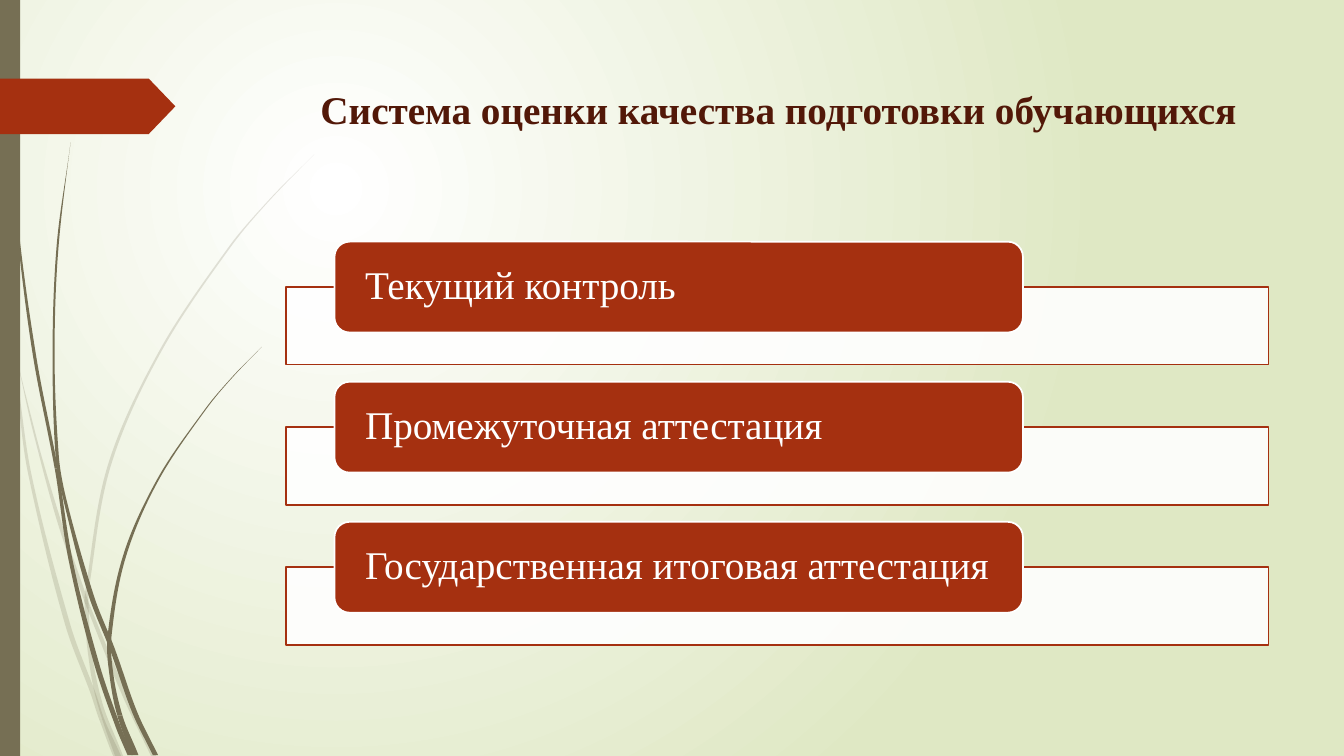
from lxml import etree
from pptx import Presentation, util as u
from pptx.dml.color import RGBColor
from pptx.enum import shapes, text
from pptx.oxml import ns

WHITE = RGBColor(0xFF, 0xFF, 0xFF)
PALE_GREEN = RGBColor(0xDF, 0xE8, 0xC4)
OLIVE = RGBColor(0x76, 0x6F, 0x54)
RUST = RGBColor(0xA5, 0x30, 0x10)
MAROON = RGBColor(0x52, 0x18, 0x08)
FONT = "Times New Roman"

TITLE = "Система оценки качества подготовки обучающихся"
STAGES = ["Текущий контроль", "Промежуточная аттестация",
          "Государственная итоговая аттестация"]
STAGE_PITCH = 3.53

PALE_STEMS = [
    ((1, 6), [(0, 7.37, 0.02), (0.25, 8.79, 0.05), (0.41, 9.55, 0.05), (0.75, 11.94, 0.08),
              (1.71, 15.75, 0.13), (2.35, 17.48, 0.13), (2.57, 18.14, 0.13),
              (2.95, 19.05, 0.2)]),
    ((3, 4), [(0.36, 8.76, 0), (0.89, 11, 0.05), (1.52, 13.23, 0.1), (2.14, 15.05, 0.1),
              (2.24, 15.32, 0.1), (3.18, 17.6, 0.13), (3.87, 19.05, 0.13)]),
    ((6, 8), [(7.92, 3.89, 0), (6.81, 5.02, 0.03), (5.8, 6.21, 0.05), (4.04, 8.85, 0.06),
              (2.76, 11.72, 0.08), (2.2, 14.83, 0.08), (2.18, 15.2, 0.1),
              (2.26, 16.41, 0.1), (2.51, 17.7, 0.13), (3, 19.05, 0.2)]),
]
DARK_STEMS = [
    ((4, 7), [(0.09, 0, 0.02), (0.19, 2.79, 0.03), (0.46, 5.91, 0.05), (0.88, 9.02, 0.08),
              (1.42, 11.81, 0.08), (1.78, 14.12, 0.1), (2.43, 16.71, 0.13),
              (2.97, 18.29, 0.13), (3.28, 19.03, 0.13)]),
    ((3, 4, 6), [(1.78, 3.58, 0), (1.45, 6.22, 0.05), (1.35, 8.86, 0.05),
                 (1.44, 11.46, 0.08), (1.63, 12.57, 0.08), (2.3, 15.01, 0.13),
                 (2.84, 16.38, 0.13), (3.4, 17.96, 0.13), (3.92, 19.03, 0.13)]),
    ((5, 7), [(6.6, 8.74, 0), (5.87, 9.49, 0.02), (5.19, 10.3, 0.03), (3.99, 12.07, 0.05),
              (3.14, 14.01, 0.08), (2.76, 16.05, 0.1), (2.81, 17.02, 0.1),
              (3.02, 18.03, 0.13), (3.4, 19.03, 0.18)]),
]


def paint(shape, color, opacity=100, line=None):
    shape.shadow.inherit = False
    shape.fill.solid()
    shape.fill.fore_color.rgb = color
    if opacity < 100:
        tint = shape.element.spPr.find(ns.qn("a:solidFill"))[0]
        etree.SubElement(tint, ns.qn("a:alpha"), val=str(opacity * 1000))
    if line is None:
        shape.line.fill.background()
    else:
        shape.line.color.rgb = line
        shape.line.width = u.Pt(1.25)


def add_block(page, kind, left, top, width, height):
    return page.shapes.add_shape(kind, u.Cm(left), u.Cm(top), u.Cm(width), u.Cm(height))


def with_slopes(points):
    before = [points[0], *points[:-1]]
    after = [*points[1:], points[-1]]
    return [(x, y, width, (end[0] - start[0]) / (end[1] - start[1]))
            for start, (x, y, width), end in zip(before, points, after)]


def bend_sides(shape, outline):
    lines = list(shape.element.iter(ns.qn("a:lnTo")))
    for line, (x1, y1, slope1), (x2, y2, slope2) in zip(lines, outline, outline[1:]):
        third = (y2 - y1) / 3
        if third:
            line.tag = ns.qn("a:cubicBezTo")
            controls = [(x1 + slope1 * third, y1 + third), (x2 - slope2 * third, y2 - third)]
            for position, (x, y) in enumerate(controls):
                point = etree.Element(ns.qn("a:pt"), x=str(u.Cm(x) - shape.left),
                                      y=str(u.Cm(y) - shape.top))
                line.insert(position, point)


def add_blade(page, knots, opacity):
    left_side = [(x - width / 2, y, slope) for x, y, width, slope in knots]
    right_side = [(x + width / 2, y, slope) for x, y, width, slope in knots]
    outline = left_side + right_side[::-1]
    corners = [(u.Cm(x), u.Cm(y)) for x, y, slope in outline]
    builder = page.shapes.build_freeform(*corners[0])
    builder.add_line_segments(corners[1:], close=True)
    blade = builder.convert_to_shape()
    bend_sides(blade, outline)
    paint(blade, OLIVE, opacity)


def add_stem(page, cuts, points, opacity):
    knots = with_slopes(points)
    for first, last in zip((0, *cuts), (*cuts, len(knots) - 1)):
        add_blade(page, knots[first:last + 1], opacity)


def set_background(page):
    fill = page.background.fill
    fill.gradient()
    for stop, color in zip(fill.gradient_stops, (WHITE, PALE_GREEN)):
        stop.color.rgb = color
    gradient = page.element.find(".//" + ns.qn("a:gradFill"))
    gradient.remove(gradient.find(ns.qn("a:lin")))
    circle = etree.SubElement(gradient, ns.qn("a:path"), path="circle")
    etree.SubElement(circle, ns.qn("a:fillToRect"),
                     l="50000", t="50000", r="100000", b="100000")


def write(box, content, color, align, bold=False):
    para = box.text_frame.paragraphs[0]
    para.text = content
    para.alignment = align
    for span in para.runs:
        span.font.name = FONT
        span.font.size = u.Pt(28)
        span.font.bold = bold
        span.font.color.rgb = color
    return para


def set_title(page):
    title = page.shapes.title
    title.left, title.top = u.Cm(7.23), u.Cm(1.73)
    title.width, title.height = u.Cm(24.77), u.Cm(3.56)
    frame = title.text_frame
    frame.word_wrap = True
    frame.auto_size = text.MSO_AUTO_SIZE.NONE
    frame.vertical_anchor = text.MSO_ANCHOR.TOP
    frame.margin_top = u.Cm(0.41)
    write(title, TITLE, MAROON, text.PP_ALIGN.CENTER, bold=True)


def add_stage(page, name, top):
    panel = add_block(page, shapes.MSO_SHAPE.RECTANGLE, 7.2, top + 1.14, 24.77, 1.96)
    paint(panel, WHITE, 90, RUST)
    label = add_block(page, shapes.MSO_SHAPE.ROUNDED_RECTANGLE, 8.43, top, 17.35, 2.29)
    paint(label, RUST, line=WHITE)
    frame = label.text_frame
    frame.word_wrap = True
    frame.vertical_anchor = text.MSO_ANCHOR.MIDDLE
    frame.margin_left = frame.margin_right = u.Cm(0.66)
    frame.margin_top = frame.margin_bottom = 0
    write(label, name, WHITE, text.PP_ALIGN.LEFT).line_spacing = 0.9


def main():
    deck = Presentation()
    deck.slide_width, deck.slide_height = u.Cm(33.87), u.Cm(19.05)
    page = deck.slides.add_slide(deck.slide_layouts[5])
    set_background(page)
    for stems, opacity in ((PALE_STEMS, 20), (DARK_STEMS, 100)):
        for cuts, points in stems:
            add_stem(page, cuts, points, opacity)
    paint(add_block(page, shapes.MSO_SHAPE.RECTANGLE, 0, 0, 0.51, 19.05), OLIVE)
    marker = add_block(page, shapes.MSO_SHAPE.PENTAGON, 0, 1.98, 4.42, 1.4)
    marker.adjustments[0] = 0.48
    paint(marker, RUST)
    set_title(page)
    for index, name in enumerate(STAGES):
        add_stage(page, name, 6.09 + index * STAGE_PITCH)
    deck.save("out.pptx")


if __name__ == "__main__":
    main()
